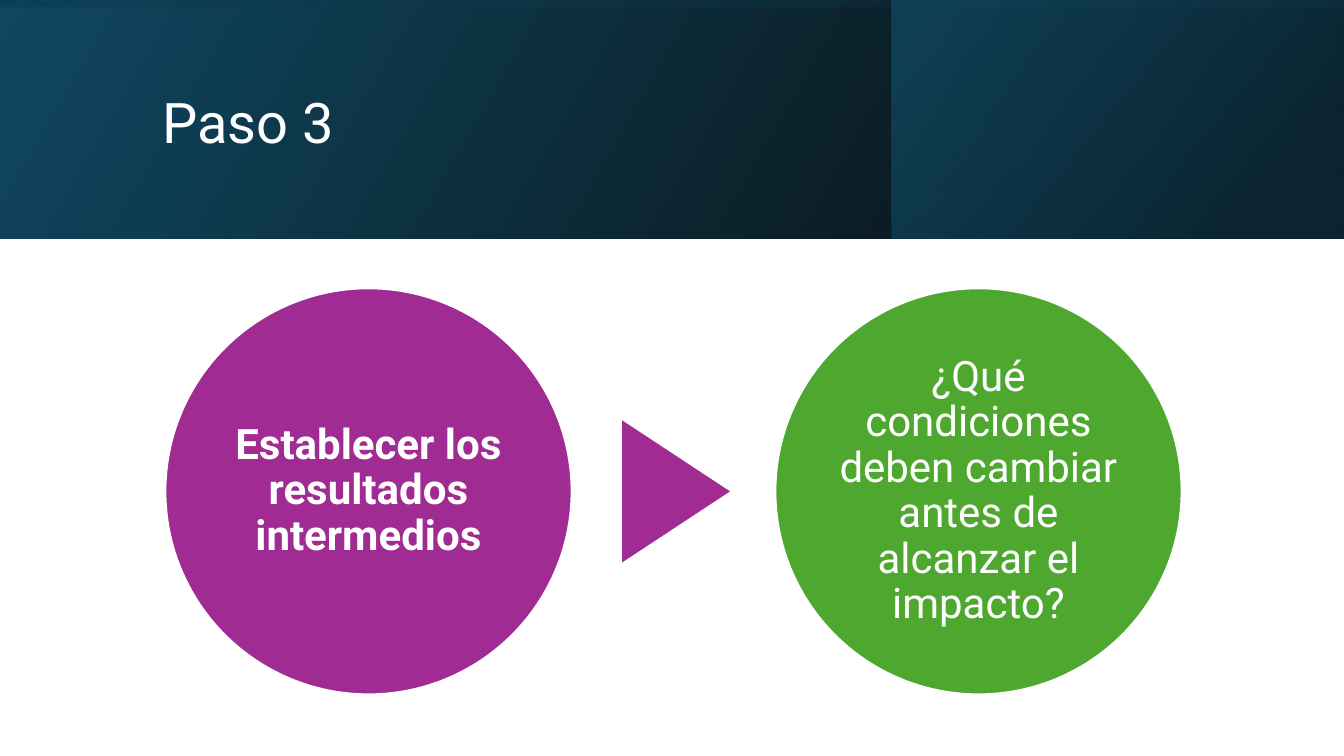
from lxml import etree
from pptx import Presentation
from pptx.dml.color import RGBColor
from pptx.enum.shapes import MSO_SHAPE as Shape
from pptx.enum.text import MSO_ANCHOR as Anchor, PP_ALIGN as Align
from pptx.oxml import parse_xml
from pptx.oxml.ns import nsdecls, qn
from pptx.util import Inches, Pt

WHITE = RGBColor(0xFF, 0xFF, 0xFF)
PURPLE = RGBColor(0xA0, 0x2B, 0x93)
GREEN = RGBColor(0x4E, 0xA7, 0x2E)
BLACK = RGBColor(0x00, 0x00, 0x00)
NAVY = RGBColor(0x10, 0x48, 0x62)
DEEP_TEAL = RGBColor(0x0B, 0x30, 0x41)
TEAL = RGBColor(0x15, 0x60, 0x82)

WIDTH, HEIGHT = 13.33, 7.5
BANNER_HEIGHT = 2.37
DIAMETER = 4.03
CIRCLE_TOP = 2.86
CIRCLE_LEFT, CIRCLE_PITCH = 1.64, 6.05
TEXT_SIDE = 2.85

presentation = Presentation()
presentation.slide_width = Inches(WIDTH)
presentation.slide_height = Inches(HEIGHT)
slide = presentation.slides.add_slide(presentation.slide_layouts[6])


def add_shape(kind, left, top, width, height, color=None):
    shape = slide.shapes.add_shape(
        kind, Inches(left), Inches(top), Inches(width), Inches(height))
    shape.shadow.inherit = False
    shape.line.fill.background()
    if color is not None:
        shape.fill.solid()
        shape.fill.fore_color.rgb = color
    return shape


def add_text(text, left, top, width, height, size, margin):
    box = slide.shapes.add_textbox(
        Inches(left), Inches(top), Inches(width), Inches(height))
    frame = box.text_frame
    frame.word_wrap = True
    frame.vertical_anchor = Anchor.MIDDLE
    frame.margin_left = frame.margin_right = Inches(margin)
    frame.margin_top = frame.margin_bottom = Inches(margin)
    paragraph = frame.paragraphs[0]
    paragraph.text = text
    paragraph.line_spacing = 0.9
    paragraph.font.name = "Roboto"
    paragraph.font.size = Pt(size)
    paragraph.font.color.rgb = WHITE
    return paragraph


# Banner: three mirrored, translucent gradients; stops are (position, color, opacity)
side_left = (WIDTH - BANNER_HEIGHT) / 2
layers = [
    (0, 0, WIDTH, BANNER_HEIGHT, 0, 330, [(0, BLACK, 96), (100, NAVY, 100)]),
    (8.84, 0, 4.48, BANNER_HEIGHT, 0, 320, [(19, DEEP_TEAL, 68), (100, TEAL, 48)]),
    (side_left, -side_left, BANNER_HEIGHT, WIDTH, 270, 350,
     [(23, NAVY, 16), (99, BLACK, 45)]),
]
for left, top, width, height, rotation, angle, stops in layers:
    layer = add_shape(Shape.RECTANGLE, left, top, width, height)
    layer.rotation = rotation
    properties = layer.element.spPr
    properties.find(qn("a:xfrm")).set("flipH", "1")
    gradient = parse_xml(
        f'<a:gradFill {nsdecls("a")} rotWithShape="1"><a:gsLst/>'
        f'<a:lin ang="{angle * 60000}" scaled="0"/></a:gradFill>')
    for position, color, opacity in stops:
        stop = etree.SubElement(gradient[0], qn("a:gs"), pos=str(position * 1000))
        value = etree.SubElement(stop, qn("a:srgbClr"), val=str(color))
        etree.SubElement(value, qn("a:alpha"), val=str(opacity * 1000))
    properties.find(qn("a:prstGeom")).addnext(gradient)

# Title
add_text("Paso 3", 1.51, 0.38, 10.63, 1.72, 40, 0.1)

# Circles with their text
circles = [
    ("Establecer los resultados intermedios", PURPLE, True),
    ("¿Qué condiciones deben cambiar antes de alcanzar el impacto?", GREEN, False),
]
inset = (DIAMETER - TEXT_SIDE) / 2
for index, (text, color, bold) in enumerate(circles):
    left = CIRCLE_LEFT + index * CIRCLE_PITCH
    circle = add_shape(Shape.OVAL, left, CIRCLE_TOP, DIAMETER, DIAMETER, color)
    circle.line.color.rgb = WHITE
    circle.line.width = Pt(1.5)
    paragraph = add_text(text, left + inset, CIRCLE_TOP + inset,
                         TEXT_SIDE, TEXT_SIDE, 30, 0.04)
    paragraph.alignment = Align.CENTER
    paragraph.font.bold = bold

# Triangle pointing from the first circle to the second
triangle = add_shape(Shape.ISOSCELES_TRIANGLE, 6, 4.34, 1.41, 1.07, PURPLE)
triangle.rotation = 90

presentation.save("out.pptx")
